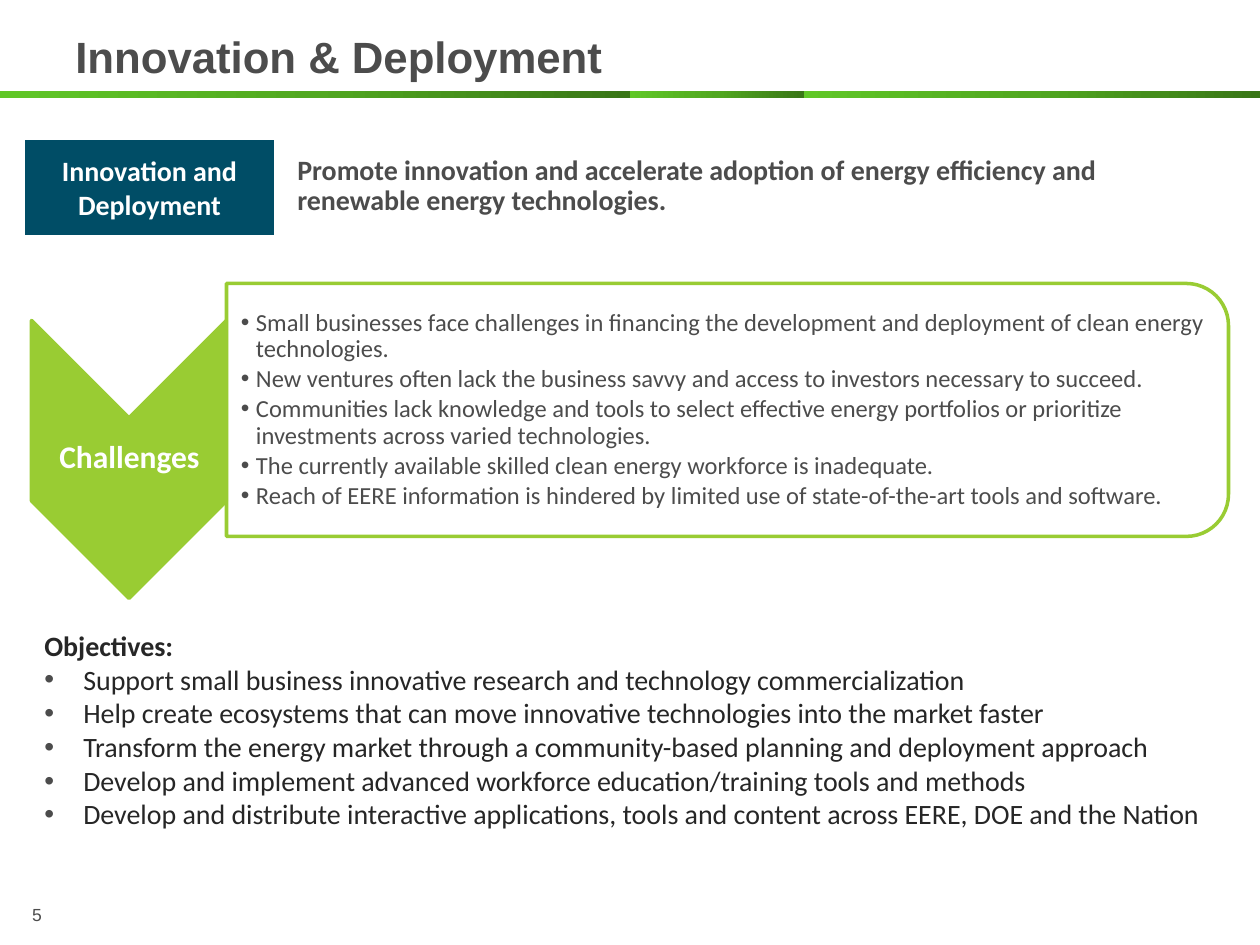
from itertools import pairwise

from lxml import etree
from pptx import Presentation
from pptx.dml.color import RGBColor
from pptx.enum.shapes import MSO_SHAPE
from pptx.enum.text import MSO_ANCHOR, PP_ALIGN
from pptx.oxml.ns import qn
from pptx.util import Emu, Pt

PX = 914400 / 126
GRAY, DARK, WHITE = "4C4C4C", "262626", "FFFFFF"
TEAL, LIME = "004D66", "99CC33"
BAR_STOPS = [(0, "60C727"), (50, "51A820"), (100, "397617")]


def px(length):
    return Emu(round(length * PX))


def rgb(color):
    return RGBColor.from_string(color)


def add_element(parent, tag, **attributes):
    return etree.SubElement(parent, qn(tag), {k: str(v) for k, v in attributes.items()})


def add_bullet(paragraph, indent, color):
    properties = paragraph._p.get_or_add_pPr()
    properties.set("marL", str(px(indent)))
    properties.set("indent", str(-px(indent)))
    add_element(add_element(properties, "a:buClr"), "a:srgbClr", val=color)
    add_element(properties, "a:buFont", typeface="Arial")
    add_element(properties, "a:buChar", char="•")


def write(frame, lines, size=16, font="Calibri", color=GRAY, bold=False, first_bold=False,
          align=PP_ALIGN.LEFT, anchor=MSO_ANCHOR.TOP, spacing=1.0, before=0, after=0,
          indent=0, bullet_from=0, margins=None):
    """Fill a text frame, one paragraph a line; an indent bullets lines from bullet_from on."""
    frame.word_wrap = True
    frame.vertical_anchor = anchor
    if margins:
        (frame.margin_left, frame.margin_top,
         frame.margin_right, frame.margin_bottom) = map(px, margins)
    for index, line in enumerate(lines):
        paragraph = frame.add_paragraph() if index else frame.paragraphs[0]
        paragraph.alignment = align
        paragraph.line_spacing = spacing
        paragraph.space_before = Pt(before if index else 0)
        paragraph.space_after = Pt(after)
        if indent and index >= bullet_from:
            add_bullet(paragraph, indent, GRAY)
        run = paragraph.add_run()
        run.text = line
        run.font.size, run.font.name = Pt(size), font
        run.font.bold = bold or (first_bold and index == 0)
        run.font.color.rgb = rgb(color)


class SlideBuilder:
    def __init__(self, presentation):
        self.slide = presentation.slides.add_slide(presentation.slide_layouts[6])

    def text(self, box, lines, **style):
        shape = self.slide.shapes.add_textbox(*map(px, box))
        write(shape.text_frame, lines, **style)

    def shape(self, kind, box, fill, line=None, width=2, rotation=0, opacity=100):
        shape = self.slide.shapes.add_shape(kind, *map(px, box))
        shape.shadow.inherit = False
        shape.rotation = rotation
        shape.fill.solid()
        shape.fill.fore_color.rgb = rgb(fill)
        if opacity < 100:
            color = shape._element.spPr.find(".//" + qn("a:srgbClr"))
            add_element(color, "a:alpha", val=opacity * 1000)
        if line:
            shape.line.color.rgb = rgb(line)
            shape.line.width = Pt(width)
        else:
            shape.line.fill.background()
        return shape

    def gradient_bar(self, box, stops):
        bar = self.shape(MSO_SHAPE.RECTANGLE, box, stops[0][1])
        bar.fill.gradient()
        bar.fill.gradient_angle = 0
        stop_list = bar._element.spPr.find(".//" + qn("a:gsLst"))
        for old_stop in list(stop_list):
            stop_list.remove(old_stop)
        for position, color in stops:
            stop = add_element(stop_list, "a:gs", pos=position * 1000)
            add_element(stop, "a:srgbClr", val=color)


def main():
    presentation = Presentation()
    presentation.slide_width, presentation.slide_height = px(1260), px(945)
    builder = SlideBuilder(presentation)

    for left, right in pairwise([0, 630, 804, 1260]):
        builder.gradient_bar((left, 91, right - left, 7), BAR_STOPS)
    builder.text((63, 0, 1134, 112), ["Innovation & Deployment"], size=25, font="Arial",
                 bold=True, anchor=MSO_ANCHOR.MIDDLE)
    builder.text((6, 900, 62, 33), ["5"], size=10, font="Arial",
                 align=PP_ALIGN.CENTER, spacing=0.9)

    label = builder.shape(MSO_SHAPE.RECTANGLE, (21, 136, 257, 103), TEAL, WHITE, 4.5)
    write(label.text_frame, ["Innovation and Deployment"], color=WHITE, bold=True,
          align=PP_ALIGN.CENTER, anchor=MSO_ANCHOR.MIDDLE, margins=(1, 1, 1, 1))
    builder.text((285, 150, 935, 74),
                 ["Promote innovation and accelerate adoption of energy efficiency and "
                  "renewable energy technologies."], bold=True, spacing=0.9)

    builder.shape(MSO_SHAPE.CHEVRON, (-10, 362, 278, 195), LIME, LIME, rotation=90)
    builder.text((32, 417, 195, 83), ["Challenges"], size=18, color=WHITE, bold=True,
                 align=PP_ALIGN.CENTER, anchor=MSO_ANCHOR.MIDDLE, spacing=0.9,
                 margins=(1, 1, 1, 1))
    builder.shape(MSO_SHAPE.ROUND_2_SAME_RECTANGLE, (601, -91, 253, 1002), WHITE, LIME,
                  rotation=90, opacity=90)
    builder.text((227, 296, 989, 228), [
        "Small businesses face challenges in financing the development and deployment "
        "of clean energy technologies.",
        "New ventures often lack the business savvy and access to investors necessary "
        "to succeed.",
        "Communities lack knowledge and tools to select effective energy portfolios or "
        "prioritize investments across varied technologies.",
        "The currently available skilled clean energy workforce is inadequate.",
        "Reach of EERE information is hindered by limited use of state-of-the-art tools "
        "and software.",
    ], size=14, anchor=MSO_ANCHOR.MIDDLE, spacing=0.9, after=2, indent=15,
        margins=(14, 1, 1, 1))

    builder.text((32, 626, 1197, 214), [
        "Objectives:",
        "Support small business innovative research and technology commercialization",
        "Help create ecosystems that can move innovative technologies into the market faster",
        "Transform the energy market through a community-based planning and deployment approach",
        "Develop and implement advanced workforce education/training tools and methods",
        "Develop and distribute interactive applications, tools and content across EERE, "
        "DOE and the Nation",
    ], color=DARK, first_bold=True, spacing=0.9, before=2, indent=39, bullet_from=1)

    presentation.save("out.pptx")


if __name__ == "__main__":
    main()
